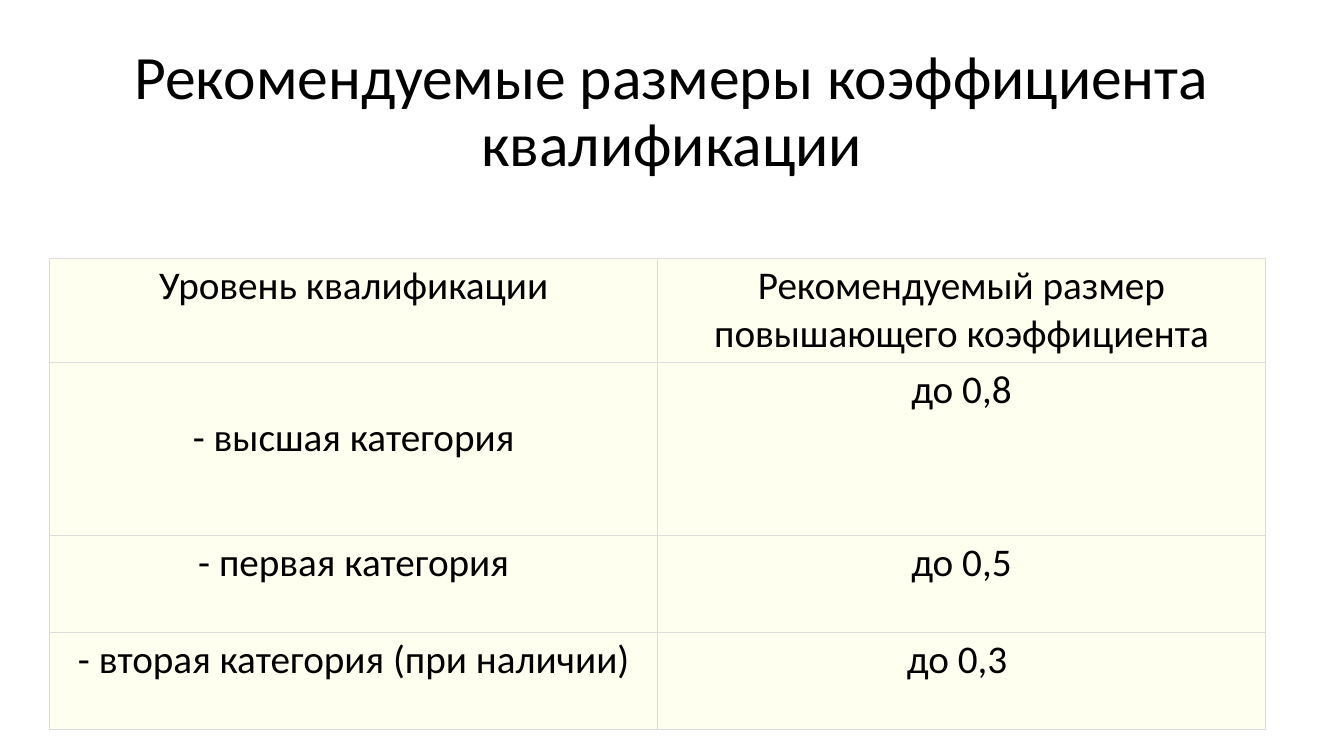
from lxml.etree import SubElement
from pptx import Presentation
from pptx.dml.color import RGBColor
from pptx.enum.text import MSO_ANCHOR, MSO_AUTO_SIZE, PP_ALIGN
from pptx.oxml.ns import qn
from pptx.util import Cm, Pt

FONT = "Calibri"
INK = "000000"
CELL_FILL = "FFFFEF"
GRID = "DDDDDD"
INSET = 0.1
LINE_HEIGHT = 1.21

TITLE = "Рекомендуемые размеры коэффициента квалификации"
LEVELS = [
    ("Уровень квалификации", "Рекомендуемый размер повышающего коэффициента"),
    ("- высшая категория", "до 0,8"),
    ("- первая категория", "до 0,5"),
    ("- вторая категория (при наличии)", "до 0,3 "),
]
ROW_HEIGHTS = [2.62, 4.37, 2.45, 2.45]
LOWERED_CELL = (1, 0)


def color(hex_value):
    """Return the colour for a hex string."""
    return RGBColor.from_string(hex_value)


def format_text(frame, size):
    """Centre the text and set its font."""
    frame.word_wrap = True
    for paragraph in frame.paragraphs:
        paragraph.alignment = PP_ALIGN.CENTER
        for run in paragraph.runs:
            run.font.name = FONT
            run.font.size = Pt(size)
            run.font.color.rgb = color(INK)


def draw_borders(cell):
    """Draw a thin line on all four sides of a cell."""
    properties = cell._tc.get_or_add_tcPr()
    for side in ("lnL", "lnR", "lnT", "lnB"):
        border = SubElement(properties, qn(f"a:{side}"), w=str(Pt(0.6)))
        SubElement(SubElement(border, qn("a:solidFill")), qn("a:srgbClr"), val=GRID)


def add_heading(slide, left, top, width, height):
    """Place and format the slide title in its box."""
    heading = slide.shapes.title
    heading.left, heading.top = Cm(left), Cm(top)
    heading.width, heading.height = Cm(width), Cm(height)
    frame = heading.text_frame
    frame.text = TITLE
    frame.auto_size = MSO_AUTO_SIZE.NONE
    frame.vertical_anchor = MSO_ANCHOR.MIDDLE
    frame.paragraphs[0].line_spacing = 0.9
    format_text(frame, 44)


def add_coefficients(slide, left, top, width):
    """Place the table of qualification levels and coefficients."""
    frame = slide.shapes.add_table(
        len(LEVELS), len(LEVELS[0]), Cm(left), Cm(top), Cm(width), Cm(sum(ROW_HEIGHTS))
    )
    coefficients = frame.table
    for column in coefficients.columns:
        column.width = Cm(width / len(LEVELS[0]))
    for row_index, (level, height) in enumerate(zip(LEVELS, ROW_HEIGHTS)):
        coefficients.rows[row_index].height = Cm(height)
        for column_index, wording in enumerate(level):
            cell = coefficients.cell(row_index, column_index)
            lowered = (row_index, column_index) == LOWERED_CELL
            cell.margin_left = cell.margin_right = cell.margin_bottom = Cm(INSET)
            cell.margin_top = Cm(INSET + LINE_HEIGHT * lowered)
            cell.vertical_anchor = MSO_ANCHOR.TOP
            draw_borders(cell)
            cell.fill.solid()
            cell.fill.fore_color.rgb = color(CELL_FILL)
            cell.text_frame.text = wording
            format_text(cell.text_frame, 28)
            for run in cell.text_frame.paragraphs[0].runs:
                run.font.bold = False


def main():
    """Build the slide and save it."""
    presentation = Presentation()
    presentation.slide_width, presentation.slide_height = Cm(33.87), Cm(19.05)
    slide = presentation.slides.add_slide(presentation.slide_layouts[5])
    add_heading(slide, 2.33, 1.01, 29.21, 3.68)
    add_coefficients(slide, 1.25, 6.5, 30.64)
    presentation.save("out.pptx")


if __name__ == "__main__":
    main()
